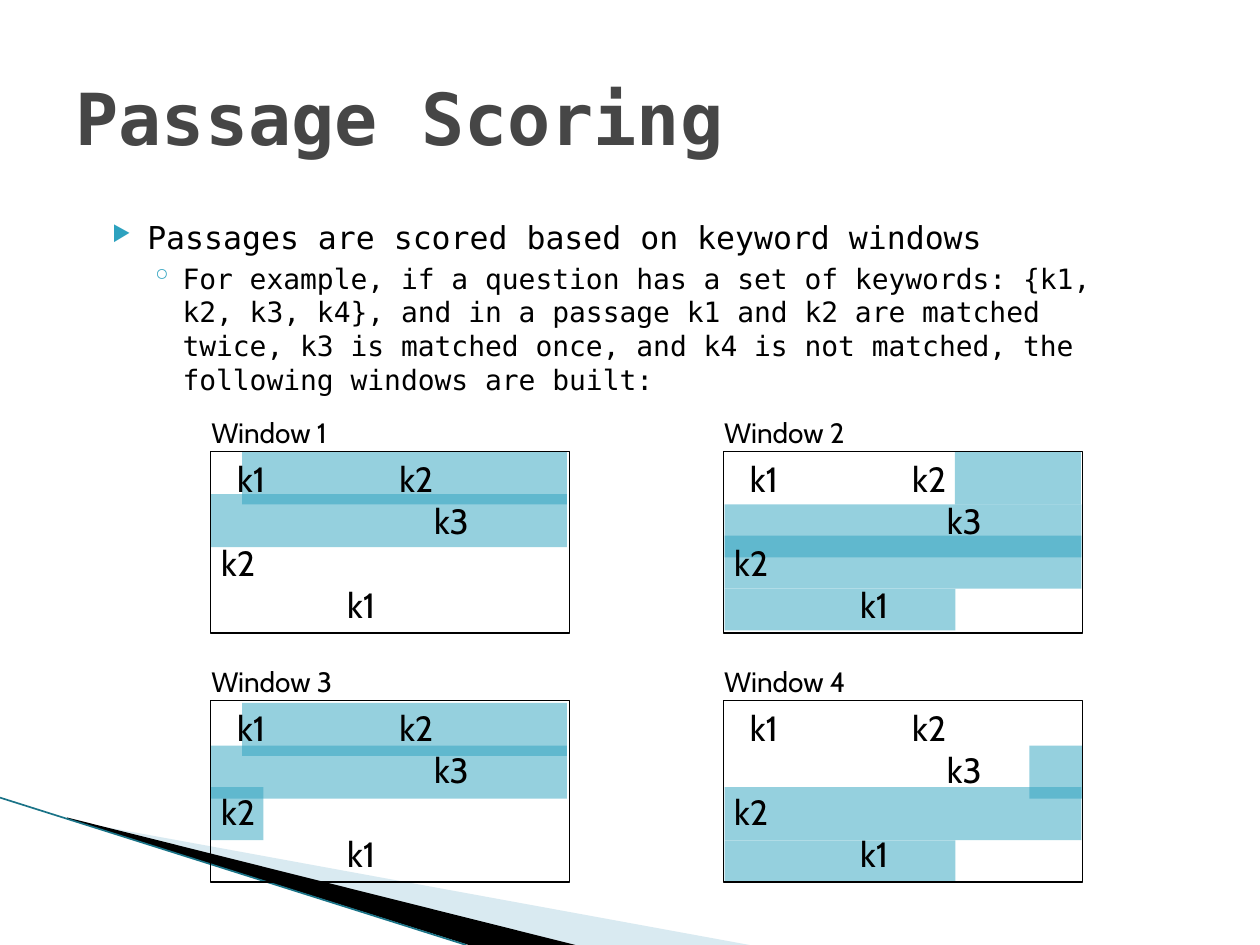
from lxml.etree import SubElement
from pptx import Presentation
from pptx.dml.color import RGBColor
from pptx.enum.shapes import MSO_CONNECTOR, MSO_SHAPE
from pptx.enum.text import MSO_ANCHOR as Anchor, PP_ALIGN as Align
from pptx.oxml.ns import qn
from pptx.util import Cm, Pt

"""Build the slide on passage scoring with four keyword windows."""


def paint(color_format, color, alpha=None):
    color_format.rgb = RGBColor.from_string(color)
    if alpha:
        choice = color_format._xFill.find(qn("a:srgbClr"))
        SubElement(choice, qn("a:alpha"), val=str(alpha * 1000))


def style(paragraph, font, size, color="000000", bold=False):
    for run in paragraph.runs:
        run.font.name, run.font.size, run.font.bold = font, Pt(size), bold
        paint(run.font.color, color)


MONO, SANS = "DejaVu Sans Mono", "Cabin"
ACCENT = "2DA2BF"

prs = Presentation()
prs.slide_width, prs.slide_height = Cm(25.4), Cm(19.05)
slide = prs.slides.add_slide(prs.slide_layouts[5])
shapes = slide.shapes

wedges = [
    ("A0CBDC", 40, [(1.4, 16.54), (15.11, 19.05), (11.58, 19.05), (1.4, 16.51)]),
    ("000000", None, [(1.35, 16.48), (11.6, 19.05), (9.45, 19.05), (1.37, 16.51)]),
]
for color, alpha, corners in wedges:
    points = [(Cm(x), Cm(y)) for x, y in corners]
    outline = shapes.build_freeform(*points[0])
    outline.add_line_segments(points[1:])
    wedge = outline.convert_to_shape()
    wedge.shadow.inherit = False
    wedge.fill.solid()
    paint(wedge.fill.fore_color, color)
    if alpha:
        SubElement(wedge._element.spPr.find(".//" + qn("a:srgbClr")),
                   qn("a:alpha"), val=str(alpha * 1000))
    wedge.line.fill.background()

edge = shapes.add_connector(MSO_CONNECTOR.STRAIGHT, 0, Cm(16.08), Cm(9.4), Cm(19.05))
edge.line.width = Pt(0.95)
paint(edge.line.color, "1A7387")
SubElement(edge._element.spPr, qn("a:effectLst"))

title = shapes.title
title.left, title.top, title.width, title.height = Cm(1.27), Cm(0.76), Cm(22.86), Cm(3.18)
title.text_frame.text = "Passage Scoring"
title.text_frame.vertical_anchor = Anchor.MIDDLE
title.text_frame.paragraphs[0].alignment = Align.LEFT
style(title.text_frame.paragraphs[0], MONO, 41, "464646", True)

body = shapes.add_textbox(Cm(1.7), Cm(4.27), Cm(21.59), Cm(4.45)).text_frame
body.word_wrap = True
points = [
    ("Passages are scored based on keyword windows", 18, 1.02, -0.71, "▶", 68),
    ("For example, if a question has a set of keywords: {k1, k2, k3, k4}, and in a "
     "passage k1 and k2 are matched twice, k3 is matched once, and k4 is not matched, "
     "the following windows are built:", 16, 1.73, -0.64, "◦", 100),
]
for level, (text, size, margin, indent, bullet, percent) in enumerate(points):
    point = body.add_paragraph() if level else body.paragraphs[0]
    point.text = text
    point.level = level
    props = point._p.get_or_add_pPr()
    props.set("marL", str(Cm(margin)))
    props.set("indent", str(Cm(indent)))
    if level:
        point.space_before = Pt(3.2)
    SubElement(SubElement(props, qn("a:buClr")), qn("a:srgbClr"), val=ACCENT)
    SubElement(props, qn("a:buSzPct"), val=str(percent * 1000))
    SubElement(props, qn("a:buChar"), char=bullet)
    style(point, MONO, size)

passage = [("\tk1\tk2", [0.32, 3.59]), ("\tk3", [4.29]), ("k2", []), ("\tk1", [2.54])]
ROW = 1.07
highlights = [
    [(0.64, 0, 6.55, ROW), (0, 0.86, 7.19, ROW)],
    [(4.67, 0, 2.54, ROW), (0.03, ROW, 7.19, ROW), (0.03, 1.7, 7.19, ROW),
     (0.03, 2.77, 4.65, 0.84)],
    [(0.64, 0.05, 6.55, ROW), (0, 0.91, 7.19, ROW), (0, 1.75, ROW, ROW)],
    [(6.17, 0.91, ROW, ROW), (0.03, 1.75, 7.19, ROW), (0.03, 2.82, 4.65, 0.84)],
]
for index, bands in enumerate(highlights):
    left = 4.24 + index % 2 * 10.34
    top = 9.1 + index // 2 * 5.02
    for dx, dy, width, height in bands:
        band = shapes.add_shape(MSO_SHAPE.RECTANGLE, Cm(left + dx), Cm(top + dy),
                                Cm(width), Cm(height))
        band.shadow.inherit = False
        band.fill.solid()
        paint(band.fill.fore_color, ACCENT)
        SubElement(band._element.spPr.find(".//" + qn("a:srgbClr")),
                   qn("a:alpha"), val="50000")
        band.line.fill.background()

    window = shapes.add_shape(MSO_SHAPE.RECTANGLE, Cm(left), Cm(top), Cm(7.24), Cm(3.66))
    window.shadow.inherit = False
    window.fill.background()
    window.line.width = Pt(0.75)
    paint(window.line.color, "000000")
    frame = window.text_frame
    frame.word_wrap = True
    frame.vertical_anchor = Anchor.TOP
    frame.margin_left = Cm(0.22)
    for row, (keywords, stops) in enumerate(passage):
        line = frame.add_paragraph() if row else frame.paragraphs[0]
        line.text = keywords
        line.alignment = Align.LEFT
        if stops:
            tabs = SubElement(line._p.get_or_add_pPr(), qn("a:tabLst"))
            for stop in stops:
                SubElement(tabs, qn("a:tab"), pos=str(Cm(stop)), algn="l")
        style(line, SANS, 20)

    label = shapes.add_textbox(Cm(left - 0.23), Cm(top - 0.85), Cm(3), Cm(0.94)).text_frame
    label.text = f"Window {index + 1}"
    style(label.paragraphs[0], SANS, 16)

prs.save("out.pptx")
